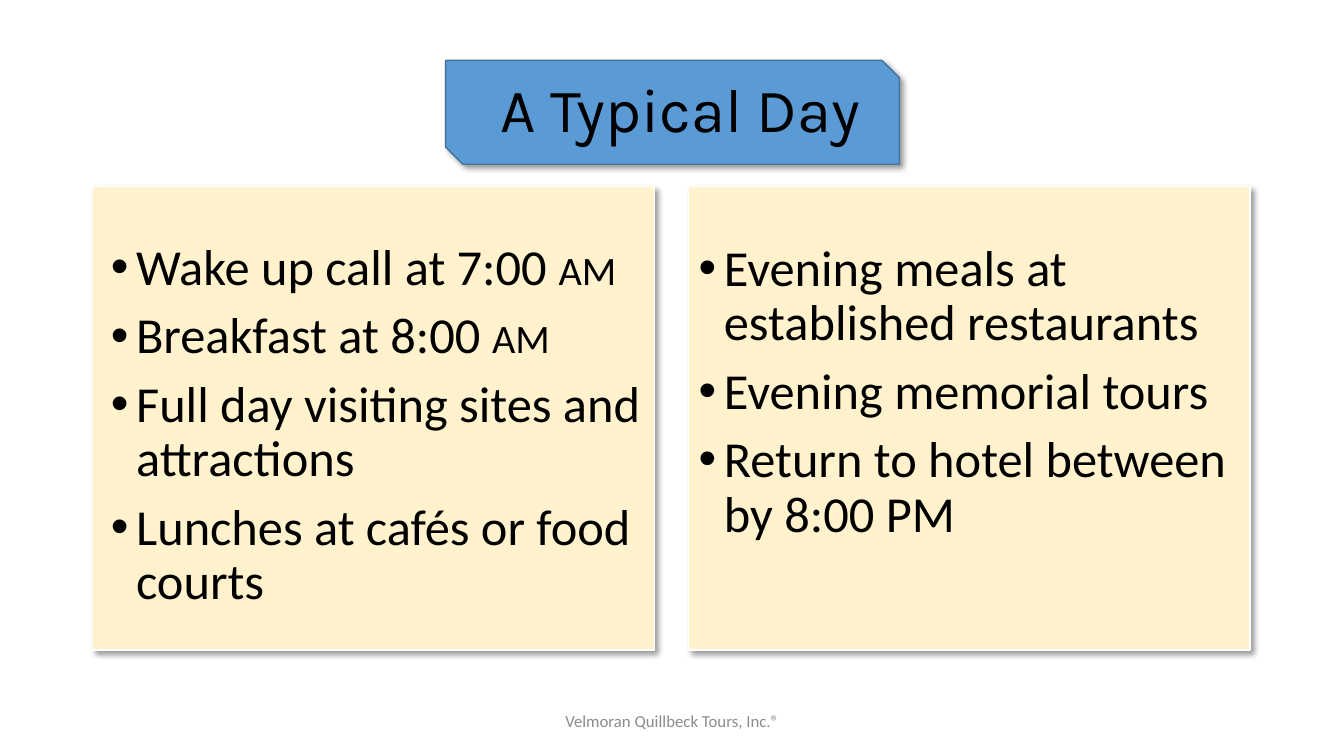
from lxml import etree
from pptx import Presentation
from pptx.dml.color import RGBColor
from pptx.enum.shapes import MSO_SHAPE
from pptx.enum.text import MSO_ANCHOR, MSO_AUTO_SIZE, PP_ALIGN
from pptx.oxml.ns import qn
from pptx.util import Inches, Pt

BLACK = RGBColor(0x00, 0x00, 0x00)
WHITE = RGBColor(0xFF, 0xFF, 0xFF)
GRAY = RGBColor(0x8C, 0x8C, 0x8C)
BLUE = RGBColor(0x5B, 0x9B, 0xD5)
NAVY = RGBColor(0x43, 0x73, 0x9E)
CREAM = RGBColor(0xFF, 0xF2, 0xCC)

RECT = MSO_SHAPE.RECTANGLE
SNIP = MSO_SHAPE.SNIP_2_DIAG_RECTANGLE
TOP, MIDDLE = MSO_ANCHOR.TOP, MSO_ANCHOR.MIDDLE
LEFT, CENTER = PP_ALIGN.LEFT, PP_ALIGN.CENTER
NO_FIT = MSO_AUTO_SIZE.NONE

MORNING = [
    [("Wake up call at 7:00 ", False), ("am", True)],
    [("Breakfast at 8:00 ", False), ("am", True)],
    [("Full day visiting sites and attractions", False)],
    [("Lunches at cafés or food courts", False)],
]
EVENING = [
    [("Evening meals at established restaurants", False)],
    [("Evening memorial tours", False)],
    [("Return to hotel between by 8:00 ", False), ("PM", True)],
]


def write(par, text, size, font="Calibri", color=BLACK, small=False):
    """Add a run; small turns on small capitals."""
    run = par.add_run()
    run.text = text
    run.font.size = Pt(size)
    run.font.name = font
    run.font.color.rgb = color
    if small:
        run.font._element.set("cap", "small")


class Deck:
    """Holds the slide and the style of its elements."""

    def __init__(self):
        self.prs = Presentation()
        self.prs.slide_width = Inches(13.33)
        self.prs.slide_height = Inches(7.5)
        self.slide = self.prs.slides.add_slide(self.prs.slide_layouts[3])
        self.depth = 2

    def panel(self, kind, box, fill, line):
        """Add a shadowed shape behind the placeholders."""
        shape = self.slide.shapes.add_shape(kind, *map(Inches, box))
        shape.fill.solid()
        shape.fill.fore_color.rgb = fill
        shape.line.color.rgb = line
        shape.line.width = Pt(1)
        shape.shadow.inherit = False
        effects = shape._element.spPr.find(qn("a:effectLst"))
        shadow = etree.SubElement(
            effects, qn("a:outerShdw"), blurRad=str(Pt(4)), dist=str(Pt(3)),
            dir="2700000", algn="tl", rotWithShape="0")
        color = etree.SubElement(shadow, qn("a:srgbClr"), val="000000")
        etree.SubElement(color, qn("a:alpha"), val="40000")
        self.slide.shapes._spTree.insert(self.depth, shape._element)
        self.depth += 1

    def frame(self, shape, box, anchor):
        shape.left, shape.top, shape.width, shape.height = map(Inches, box)
        frame = shape.text_frame
        frame.word_wrap = True
        frame.auto_size = NO_FIT
        frame.vertical_anchor = anchor
        return frame

    def title(self, text, box):
        par = self.frame(self.slide.shapes.title, box, MIDDLE).paragraphs[0]
        par.alignment = CENTER
        par.line_spacing = 0.9
        write(par, text, 44, font="Karla")

    def bullets(self, index, items, box):
        frame = self.frame(self.slide.placeholders[index], box, TOP)
        for i, item in enumerate(items):
            par = frame.add_paragraph() if i else frame.paragraphs[0]
            par.alignment = LEFT
            par.line_spacing = 0.9
            par.space_before = Pt(10 if i else 0)
            props = par._p.get_or_add_pPr()
            props.set("marL", str(Inches(0.25)))
            props.set("indent", str(-Inches(0.25)))
            etree.SubElement(props, qn("a:buFont"), typeface="Arial")
            etree.SubElement(props, qn("a:buChar"), char="•")
            for text, small in item:
                write(par, text, 36, small=small)

    def footer(self, text, box):
        shape = self.slide.shapes.add_textbox(*map(Inches, box))
        par = self.frame(shape, box, MIDDLE).paragraphs[0]
        par.alignment = CENTER
        write(par, text, 12, color=GRAY)


def main():
    deck = Deck()
    deck.panel(SNIP, (4.42, 0.6, 4.5, 1.03), BLUE, NAVY)
    for left in (6.83, 0.92):
        deck.panel(RECT, (left, 1.85, 5.57, 4.6), CREAM, WHITE)
    deck.title("A Typical Day", (1, 0.39, 11.5, 1.45))
    deck.bullets(1, MORNING, (1, 2.35, 5.75, 4.03))
    deck.bullets(2, EVENING, (6.83, 2.36, 5.67, 4.03))
    deck.footer("Velmoran Quillbeck Tours, Inc.®", (4.42, 6.95, 4.5, 0.4))
    deck.prs.save("out.pptx")


if __name__ == "__main__":
    main()
